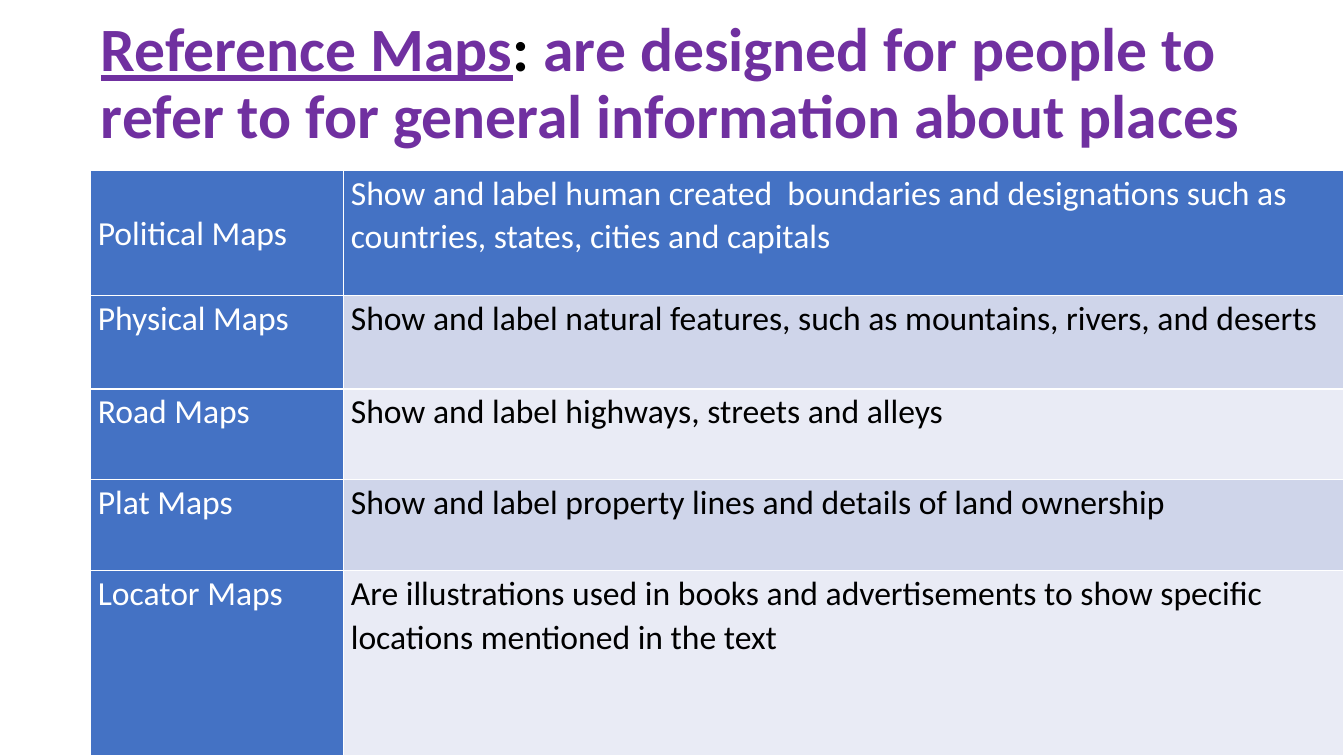
from dataclasses import dataclass

from lxml.etree import SubElement
from pptx import Presentation
from pptx.dml.color import RGBColor
from pptx.enum.text import MSO_ANCHOR as Anchor, MSO_AUTO_SIZE as AutoSize, PP_ALIGN as Align
from pptx.oxml.ns import qn
from pptx.util import Inches, Pt

TITLE_SPANS = [
    ("Reference Maps", "purple", True),
    (": ", "black", False),
    ("are designed for people to refer to for general information about places", "purple", False),
]
MAP_TYPES = [
    ("Political Maps", "Show and label human created  boundaries and designations such as "
                       "countries, states, cities and capitals"),
    ("Physical Maps", "Show and label natural features, such as mountains, rivers, and deserts"),
    ("Road Maps", "Show and label highways, streets and alleys"),
    ("Plat Maps", "Show and label property lines and details of land ownership"),
    ("Locator Maps", "Are illustrations used in books and advertisements to show specific "
                     "locations mentioned in the text"),
]
COLUMN_WIDTHS = [2.51, 9.92]
ROW_HEIGHTS = [1.24, 0.93, 0.9, 0.9, 1.84]
PAGE_WIDTH, PAGE_HEIGHT = 13.33, 7.5
LEFT, TABLE_TOP = 0.9, 1.69
CELL_MARGIN = 0.07


@dataclass(frozen=True)
class Theme:
    font: str = "Calibri"
    title_size: int = 44
    body_size: int = 24
    border_width: int = 1
    purple: str = "7030A0"
    black: str = "000000"
    white: str = "FFFFFF"
    header: str = "4472C4"
    bands: tuple = ("E9EBF5", "CFD5EA")


THEME = Theme()


def format_span(span, size, color, bold=False, underline=False):
    span.font.name = THEME.font
    span.font.size = Pt(size)
    span.font.bold = bold
    span.font.underline = underline
    span.font.color.rgb = RGBColor.from_string(color)


def add_borders(cell):
    properties = cell._tc.get_or_add_tcPr()
    for side in ("L", "R", "T", "B"):
        line = SubElement(properties, qn(f"a:ln{side}"), w=str(Pt(THEME.border_width)))
        fill = SubElement(line, qn("a:solidFill"))
        SubElement(fill, qn("a:srgbClr"), val=THEME.white)


def fill_cell(cell, text, fill, color):
    cell.margin_left = cell.margin_right = Inches(CELL_MARGIN)
    cell.margin_top = cell.margin_bottom = 0
    add_borders(cell)
    cell.fill.solid()
    cell.fill.fore_color.rgb = RGBColor.from_string(fill)
    para = cell.text_frame.paragraphs[0]
    para.text = text
    para.line_spacing = 1.07
    format_span(para.runs[0], THEME.body_size, color)


def add_title(page):
    title = page.shapes.title
    title.left, title.top = Inches(LEFT), 0
    title.width, title.height = Inches(PAGE_WIDTH - LEFT), Inches(TABLE_TOP)
    frame = title.text_frame
    frame.word_wrap = True
    frame.auto_size = AutoSize.NONE
    frame.vertical_anchor = Anchor.MIDDLE
    para = frame.paragraphs[0]
    para.alignment = Align.LEFT
    para.line_spacing = 0.9
    for text, color, underline in TITLE_SPANS:
        span = para.add_run()
        span.text = text
        format_span(span, THEME.title_size, getattr(THEME, color), True, underline)


def add_map_table(page):
    table = page.shapes.add_table(
        len(MAP_TYPES), len(COLUMN_WIDTHS), Inches(LEFT), Inches(TABLE_TOP),
        Inches(sum(COLUMN_WIDTHS)), Inches(sum(ROW_HEIGHTS))).table
    for column, width in zip(table.columns, COLUMN_WIDTHS):
        column.width = Inches(width)
    for row, height in zip(table.rows, ROW_HEIGHTS):
        row.height = Inches(height)
    for row_index, texts in enumerate(MAP_TYPES):
        for column_index, text in enumerate(texts):
            is_header = row_index == 0 or column_index == 0
            fill = THEME.header if is_header else THEME.bands[row_index % 2]
            color = THEME.white if is_header else THEME.black
            fill_cell(table.cell(row_index, column_index), text, fill, color)
    table.cell(0, 0).vertical_anchor = Anchor.MIDDLE


def main():
    deck = Presentation()
    deck.slide_width, deck.slide_height = Inches(PAGE_WIDTH), Inches(PAGE_HEIGHT)
    page = deck.slides.add_slide(deck.slide_layouts[5])
    add_title(page)
    add_map_table(page)
    deck.save("out.pptx")


if __name__ == "__main__":
    main()
